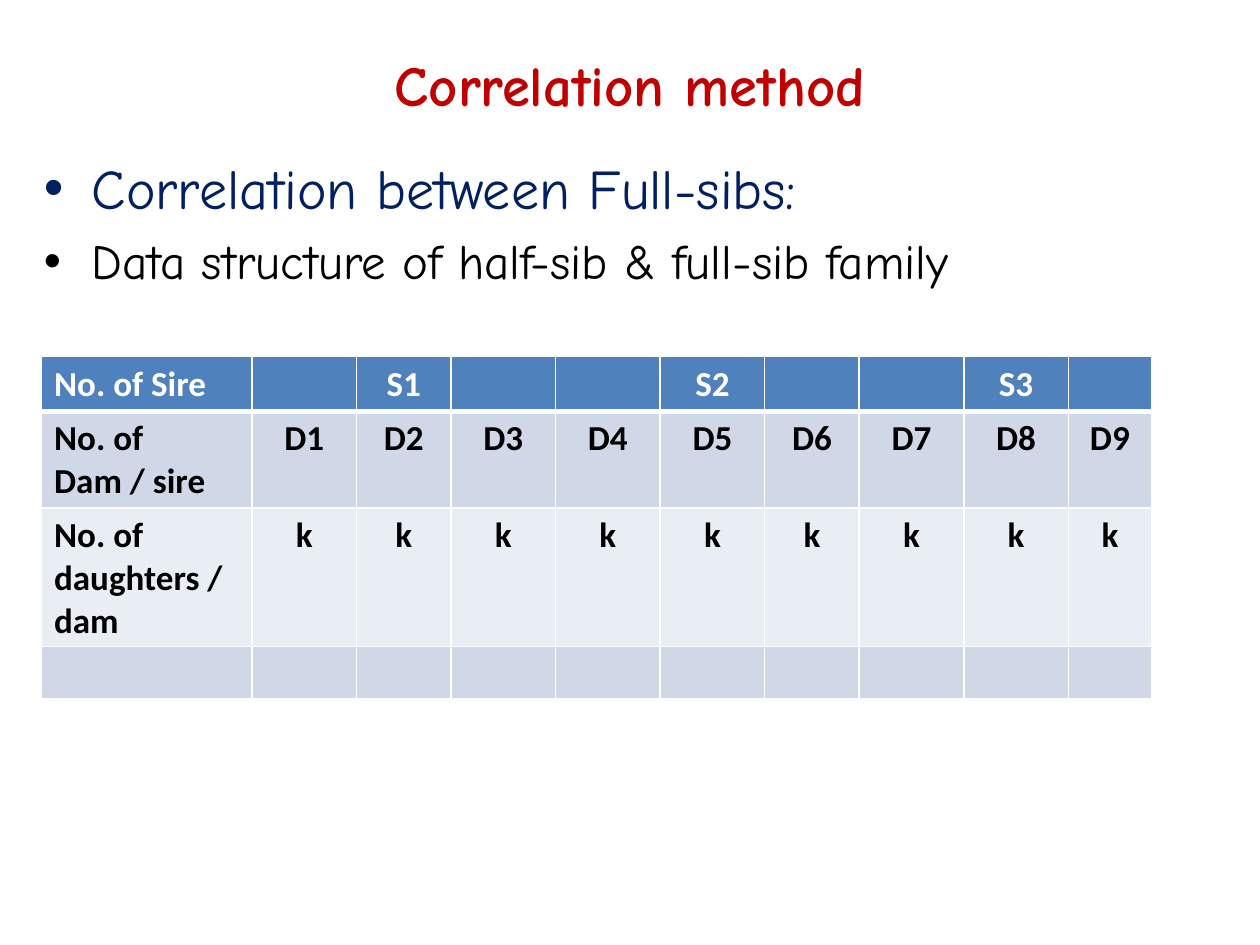
from lxml import etree
from pptx import Presentation
from pptx.dml.color import RGBColor
from pptx.enum.text import MSO_ANCHOR, PP_ALIGN
from pptx.oxml.ns import qn
from pptx.util import Inches, Pt

CENTER, LEFT = PP_ALIGN.CENTER, PP_ALIGN.LEFT
MIDDLE, TOP = MSO_ANCHOR.MIDDLE, MSO_ANCHOR.TOP
HEADING_FONT, TABLE_FONT = "Comic Neue", "Calibri"
WHITE, BLACK, RED, NAVY = "FFFFFF", "000000", "C00000", "002060"

COLUMN_WIDTHS = [1.67, 0.83, 0.75, 0.83, 0.83, 0.83, 0.75, 0.83, 0.83, 0.66]
ROW_HEIGHT = 0.41
FAMILY_ROWS = [
    ["No. of Sire", "", "S1", "", "", "S2", "", "", "S3", ""],
    ["No. of\nDam / sire"] + [f"D{dam}" for dam in range(1, 10)],
    ["No. of daughters /dam"] + ["k"] * 9,
    [""] * 10,
]
ROW_FILLS = ["4F81BD", "D0D8E8", "E9EDF4", "D0D8E8"]


def rgb(value):
    """Turn a hex string into a colour."""
    return RGBColor.from_string(value)


def add_run(paragraph, text, font_name, size, color, bold=False):
    """Add one formatted run to a paragraph."""
    run = paragraph.add_run()
    run.text = text
    run.font.name = font_name
    run.font.size = Pt(size)
    run.font.bold = bold
    run.font.color.rgb = rgb(color)


def add_text_frame(slide, left, top, width, height, anchor):
    """Add a wrapping text box and return its text frame."""
    box = slide.shapes.add_textbox(Inches(left), Inches(top), Inches(width), Inches(height))
    box.text_frame.word_wrap = True
    box.text_frame.vertical_anchor = anchor
    return box.text_frame


def add_title(slide, text):
    """Add the centred slide title."""
    paragraph = add_text_frame(slide, 0.5, 0.33, 9, 0.67, MIDDLE).paragraphs[0]
    paragraph.alignment = CENTER
    add_run(paragraph, text, HEADING_FONT, 32.4, RED, True)


def add_bullets(slide, points):
    """Add the bulleted points, each given as text, size and colour."""
    frame = add_text_frame(slide, 0.25, 1.17, 9, 4.75, TOP)
    for index, (text, size, color) in enumerate(points):
        paragraph = frame.add_paragraph() if index else frame.paragraphs[0]
        properties = paragraph._p.get_or_add_pPr()
        properties.set("marL", str(Inches(0.38)))
        properties.set("indent", str(Inches(-0.38)))
        etree.SubElement(properties, qn("a:buFont")).set("typeface", "Arial")
        etree.SubElement(properties, qn("a:buChar")).set("char", "•")
        if index:
            paragraph.space_before = Pt(size * 0.2)
        add_run(paragraph, text, HEADING_FONT, size, color)


def set_borders(cell, bottom_width):
    """Draw white borders around a cell and keep its fill after them."""
    properties = cell._tc.get_or_add_tcPr()
    widths = {"a:lnL": 1, "a:lnR": 1, "a:lnT": 1, "a:lnB": bottom_width}
    for position, (side, width) in enumerate(widths.items()):
        line = etree.Element(qn(side), w=str(Pt(width)))
        fill = etree.SubElement(line, qn("a:solidFill"))
        etree.SubElement(fill, qn("a:srgbClr")).set("val", WHITE)
        properties.insert(position, line)


def fill_cell(cell, text, fill, color, alignment, bottom_width):
    """Set the text, fill and borders of a table cell."""
    cell.fill.solid()
    cell.fill.fore_color.rgb = rgb(fill)
    set_borders(cell, bottom_width)
    paragraph = cell.text_frame.paragraphs[0]
    paragraph.alignment = alignment
    if text:
        for index, line in enumerate(text.split("\n")):
            if index:
                paragraph.add_line_break()
            add_run(paragraph, line, TABLE_FONT, 20, color, True)


def add_family_table(slide):
    """Add the table of sires, dams and daughters."""
    table = slide.shapes.add_table(
        len(FAMILY_ROWS), len(COLUMN_WIDTHS), Inches(0.33), Inches(2.83),
        Inches(sum(COLUMN_WIDTHS)), Inches(ROW_HEIGHT * len(FAMILY_ROWS))).table
    for column, width in zip(table.columns, COLUMN_WIDTHS):
        column.width = Inches(width)
    for row_index, (texts, fill) in enumerate(zip(FAMILY_ROWS, ROW_FILLS)):
        table.rows[row_index].height = Inches(ROW_HEIGHT)
        color, bottom_width = (BLACK, 1) if row_index else (WHITE, 3)
        for column_index, text in enumerate(texts):
            alignment = CENTER if column_index else LEFT
            fill_cell(table.cell(row_index, column_index), text, fill, color,
                      alignment, bottom_width)


def main():
    """Build and save the slide."""
    presentation = Presentation()
    presentation.slide_width, presentation.slide_height = Inches(10), Inches(7.5)
    slide = presentation.slides.add_slide(presentation.slide_layouts[6])
    add_title(slide, "Correlation method")
    add_bullets(slide, [
        ("Correlation between Full-sibs:", 32, NAVY),
        ("Data structure of half-sib & full-sib family", 28, BLACK),
    ])
    add_family_table(slide)
    presentation.save("out.pptx")


if __name__ == "__main__":
    main()
